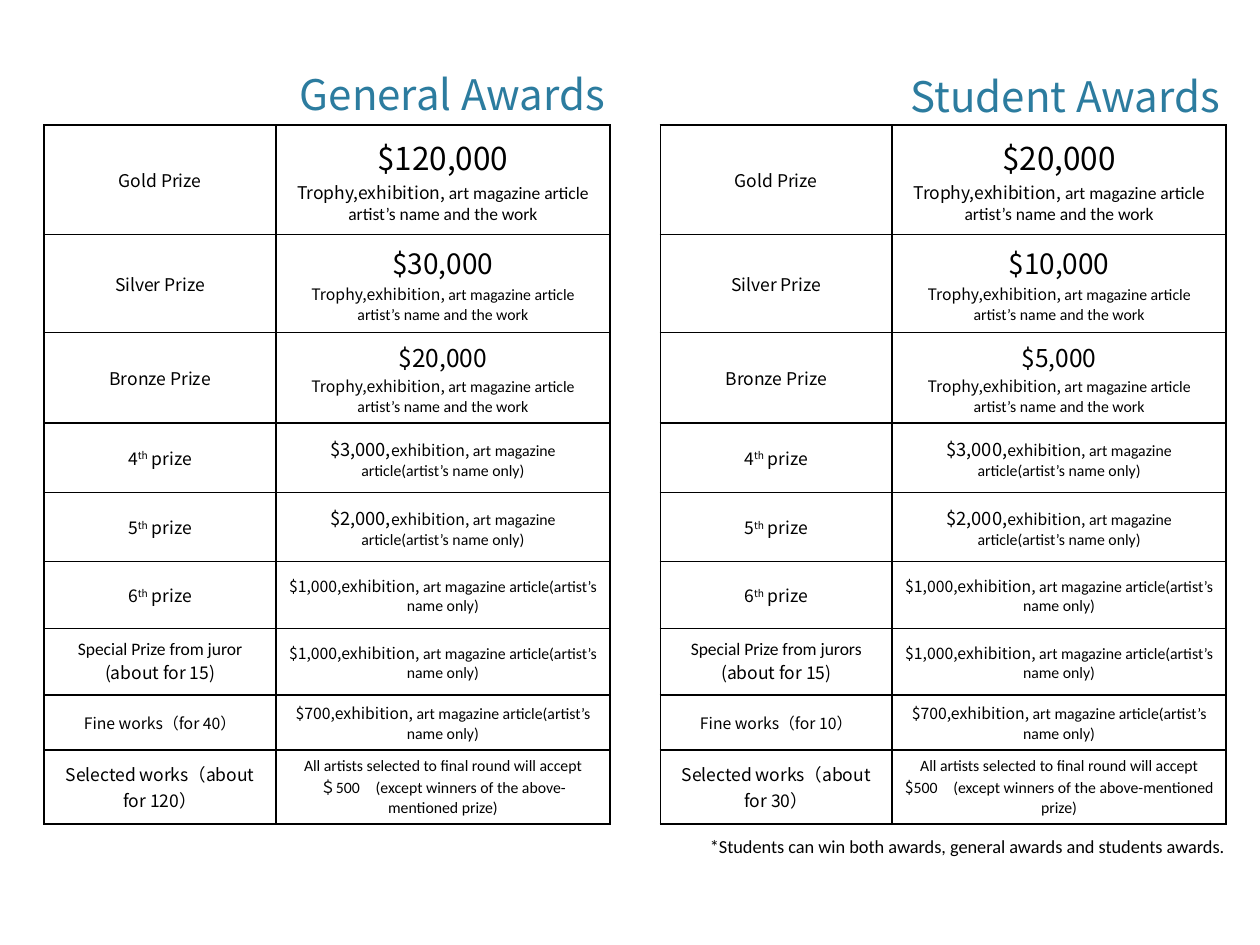
from lxml import etree
from pptx import Presentation, util as u
from pptx.dml.color import RGBColor
from pptx.enum import text
from pptx.oxml import ns

SANS, LATIN = "Noto Sans CJK JP", "Calibri"
BLACK, TEAL = "000000", "2C7C9F"


def write(frame, paragraphs, align=text.PP_ALIGN.CENTER, colour=BLACK):
    """Fill a frame with paragraphs, each a list of (words, size, font[, baseline])."""
    for index, spans in enumerate(paragraphs):
        para = frame.add_paragraph() if index else frame.paragraphs[0]
        para.alignment = align
        for words, size, font, *baseline in spans:
            span = para.add_run()
            span.text = words
            span.font.size = u.Pt(size)
            span.font.name = font
            span.font.color.rgb = RGBColor.from_string(colour)
            props = span.font._element
            etree.SubElement(props, ns.qn("a:ea"), typeface=SANS)
            if baseline:
                props.set("baseline", str(baseline[0]))


def outline(cell):
    """Draw thin black borders around a cell that has no fill."""
    props = cell._tc.get_or_add_tcPr()
    for side in ("lnL", "lnR", "lnT", "lnB"):
        line = etree.SubElement(props, ns.qn("a:" + side), w=str(u.Pt(1)))
        fill = etree.SubElement(line, ns.qn("a:solidFill"))
        etree.SubElement(fill, ns.qn("a:srgbClr"), val=BLACK)
    cell.fill.background()


deck = Presentation()
deck.slide_width, deck.slide_height = u.Inches(10), u.Inches(7.5)
page = deck.slides.add_slide(deck.slide_layouts[5])

columns = [1.84, 2.65]
rows = [0.87, 0.78, 0.71, 0.55, 0.55, 0.53, 0.53, 0.43, 0.59]
table_top = 0.99
article = " art magazine article"
name_only = article + "(artist’s name only)"
final_round = "All artists selected to final round will accept "
exception = "500\u3000(except winners of the above-mentioned prize)".replace("\u3000", "　")

# Heading, left of table, left of heading, top three sums, juror word, places, last cell
awards = [
    ("General Awards", 0.35, 1.38, ["$120,000", "$30,000", "$20,000"], "juror", 40, 120,
     [(final_round + "＄" + exception, 9, LATIN)]),
    ("Student Awards", 5.24, 6.26, ["$20,000", "$10,000", "$5,000"], "jurors", 10, 30,
     [(final_round, 9, LATIN), ("$", 9, SANS), (exception, 9, LATIN)]),
]

for heading, left, heading_left, sums, juror, fine, selected, last in awards:
    if heading == "General Awards":
        box = page.shapes.title
        height = 0.55
    else:
        box = page.shapes.add_textbox(0, 0, 0, 0)
        height = 0.57
    box.left, box.top = u.Inches(heading_left), u.Inches(0.44)
    box.width, box.height = u.Inches(3.52), u.Inches(height)
    box.text_frame.word_wrap = True
    box.text_frame.auto_size = text.MSO_AUTO_SIZE.NONE
    box.text_frame.vertical_anchor = text.MSO_ANCHOR.BOTTOM
    write(box.text_frame, [[(heading, 24, SANS)]], text.PP_ALIGN.RIGHT, TEAL)

    content = []
    for metal, amount, big, small in zip(["Gold", "Silver", "Bronze"], sums, [18, 16, 14], [10, 9, 9]):
        content.append((
            [[(metal + " Prize", 10, SANS)]],
            [[(amount, big, SANS)],
             [("Trophy,exhibition,", small, SANS),
              (article + " artist’s name and the work", small, LATIN)]],
        ))
    benefits = [
        [("$3,000,", 10.5, SANS), ("exhibition,", 9, SANS)],
        [("$2,000,", 10.5, SANS), ("exhibition,", 9, SANS)],
        [("$1,000,exhibition,", 9, SANS)],
    ]
    for place, benefit in zip("456", benefits):
        content.append((
            [[(place, 10, SANS), ("th", 10, SANS, 30000), (" prize", 10, SANS)]],
            [benefit + [(name_only, 9, LATIN)]],
        ))
    content += [
        ([[(f"Special Prize from {juror} ", 10, LATIN), ("(about for 15)", 10, SANS)]],
         [[("$1,000,exhibition,", 9, SANS), (name_only, 9, LATIN)]]),
        ([[(f"Fine works（for {fine}）", 9, SANS)]],
         [[("$700,exhibition,", 9, SANS), (name_only, 9, LATIN)]]),
        ([[(f"Selected works（about for {selected}）", 10, SANS)]], [last]),
    ]

    table = page.shapes.add_table(
        len(rows), len(columns), u.Inches(left), u.Inches(table_top),
        u.Inches(sum(columns)), u.Inches(sum(rows))).table
    table.first_row = table.horz_banding = False
    for column, width in zip(table.columns, columns):
        column.width = u.Inches(width)
    for row, height, prize in zip(table.rows, rows, content):
        row.height = u.Inches(height)
        for cell, paragraphs in zip(row.cells, prize):
            outline(cell)
            cell.vertical_anchor = text.MSO_ANCHOR.MIDDLE
            write(cell.text_frame, paragraphs)

footnote = page.shapes.add_textbox(u.Inches(5.35), u.Inches(6.58), u.Inches(4.47), u.Inches(0.28))
footnote.text_frame.word_wrap = True
write(footnote.text_frame,
      [[("*Students can win both awards, general awards and students awards.", 10.5, LATIN)]],
      text.PP_ALIGN.RIGHT)

deck.save("out.pptx")
